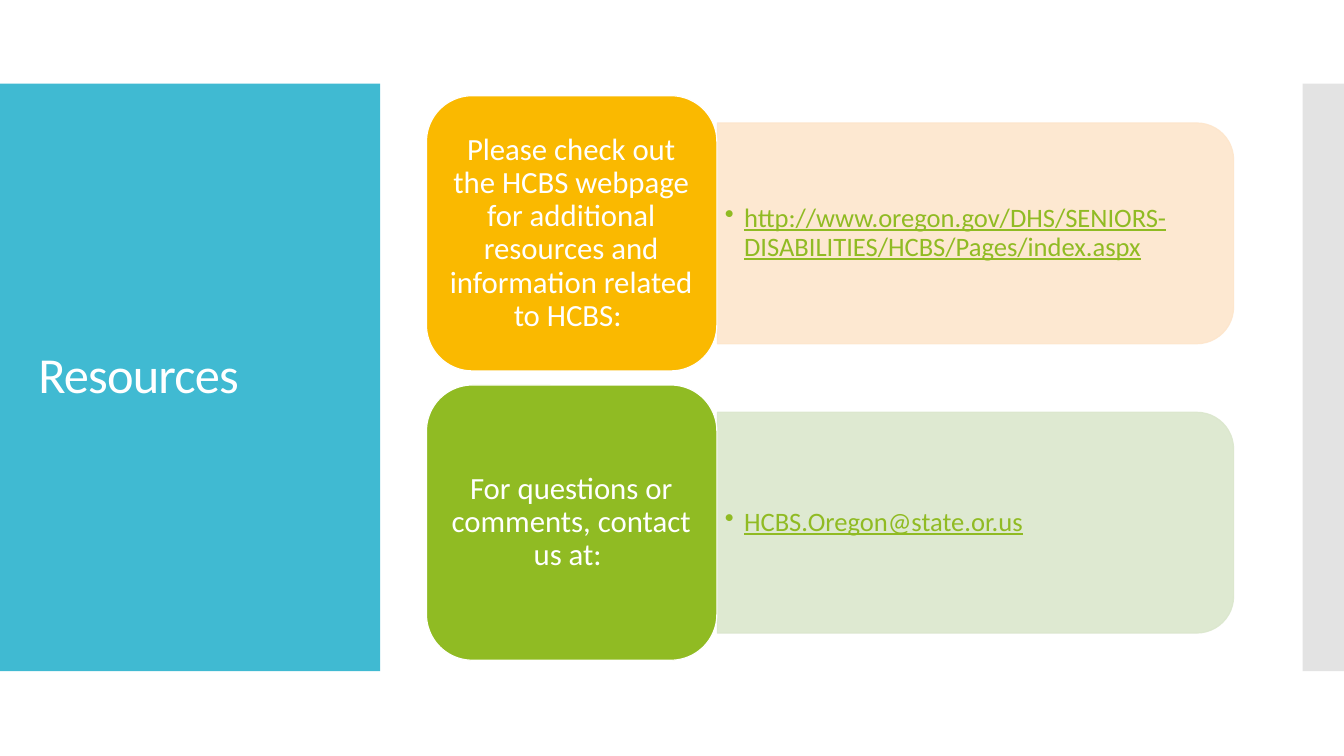
from lxml.etree import SubElement
from pptx import Presentation
from pptx.dml.color import RGBColor
from pptx.enum.shapes import MSO_SHAPE as Form
from pptx.enum.text import MSO_ANCHOR as Anchor, PP_ALIGN as Align
from pptx.oxml.ns import qn
from pptx.util import Inches, Pt


def paint(fill, color, alpha=100):
    """Set a solid fill, with its opacity in percent."""
    fill.solid()
    fill.fore_color.rgb = RGBColor.from_string(color)
    if alpha < 100:
        tint = fill._xPr.find(qn("a:solidFill"))[0]
        SubElement(tint, qn("a:alpha"), val=str(alpha * 1000))


def write(box, text, size, color, align, pad):
    """Fill a text frame with one paragraph, pad being side and top insets."""
    frame = box.text_frame
    frame.text = text
    frame.word_wrap = True
    frame.vertical_anchor = Anchor.MIDDLE
    frame.margin_left = frame.margin_right = Inches(pad[0])
    frame.margin_top = frame.margin_bottom = Inches(pad[1])
    para = frame.paragraphs[0]
    para.alignment = align
    para.line_spacing = 0.9
    font = para.runs[0].font
    font.name = "Calibri"
    font.size = Pt(size)
    paint(font.fill, color)
    return para


deck = Presentation()
deck.slide_width, deck.slide_height = Inches(13.33), Inches(7.5)
slide = deck.slides.add_slide(deck.slide_layouts[5])
shapes = slide.shapes

# Side panels
for left, width, color, alpha in [(0, 3.77, "40BAD2", 100), (12.92, 0.41, "C8C8C8", 50)]:
    panel = shapes.add_shape(
        Form.RECTANGLE, Inches(left), Inches(0.83), Inches(width), Inches(5.83))
    panel.shadow.inherit = False
    paint(panel.fill, color, alpha)
    panel.line.fill.background()

# Title, in front of its panel
title = shapes.title
title.left, title.top = Inches(0.28), Inches(1.23)
title.width, title.height = Inches(3.22), Inches(5.03)
para = write(title, "Resources", 36, "FFFFFF", Align.LEFT, (0.1, 0.05))
para.runs[0].font._element.set("spc", "-60")
shapes._spTree.append(title._element)

# Rows: a card and the tab on its right
rows = [
    ("Please check out the HCBS webpage for additional resources and information related to HCBS: ",
     "http://www.oregon.gov/DHS/SENIORS-DISABILITIES/HCBS/Pages/index.aspx",
     "FAB900", "FDE6CC"),
    ("For questions or comments, contact us at: ",
     "HCBS.Oregon@state.or.us", "90BB23", "DBE7CD"),
]
for i, (label, link, dark, light) in enumerate(rows):
    top = 0.95 + 2.87 * i
    mid = top + 1.365

    # The tab is drawn upright and turned a quarter to the right
    tab = shapes.add_shape(
        Form.ROUND_2_SAME_RECTANGLE, Inches(8.58), Inches(mid - 2.56), Inches(2.19), Inches(5.12))
    tab.rotation = 90
    card = shapes.add_shape(
        Form.ROUNDED_RECTANGLE, Inches(4.23), Inches(top), Inches(2.88), Inches(2.73))
    for shape, color, edge, alpha in [(tab, light, light, 90), (card, dark, "FFFFFF", 100)]:
        shape.shadow.inherit = False
        paint(shape.fill, color, alpha)
        paint(shape.line.fill, edge, alpha)
        shape.line.width = Pt(0.85)

    box = shapes.add_textbox(Inches(7.11), Inches(mid - 0.985), Inches(5.01), Inches(1.97))
    para = write(box, link, 19, "90BB23", Align.LEFT, (0.08, 0.04))
    para.runs[0].font.underline = True
    props = para._p.get_or_add_pPr()
    props.set("marL", str(Inches(0.19)))
    props.set("indent", str(Inches(-0.19)))
    SubElement(props, qn("a:buChar"), char="•")

    box = shapes.add_textbox(Inches(4.36), Inches(mid - 1.23), Inches(2.61), Inches(2.46))
    write(box, label, 22, "FFFFFF", Align.CENTER, (0.09, 0.05))

deck.save("out.pptx")
